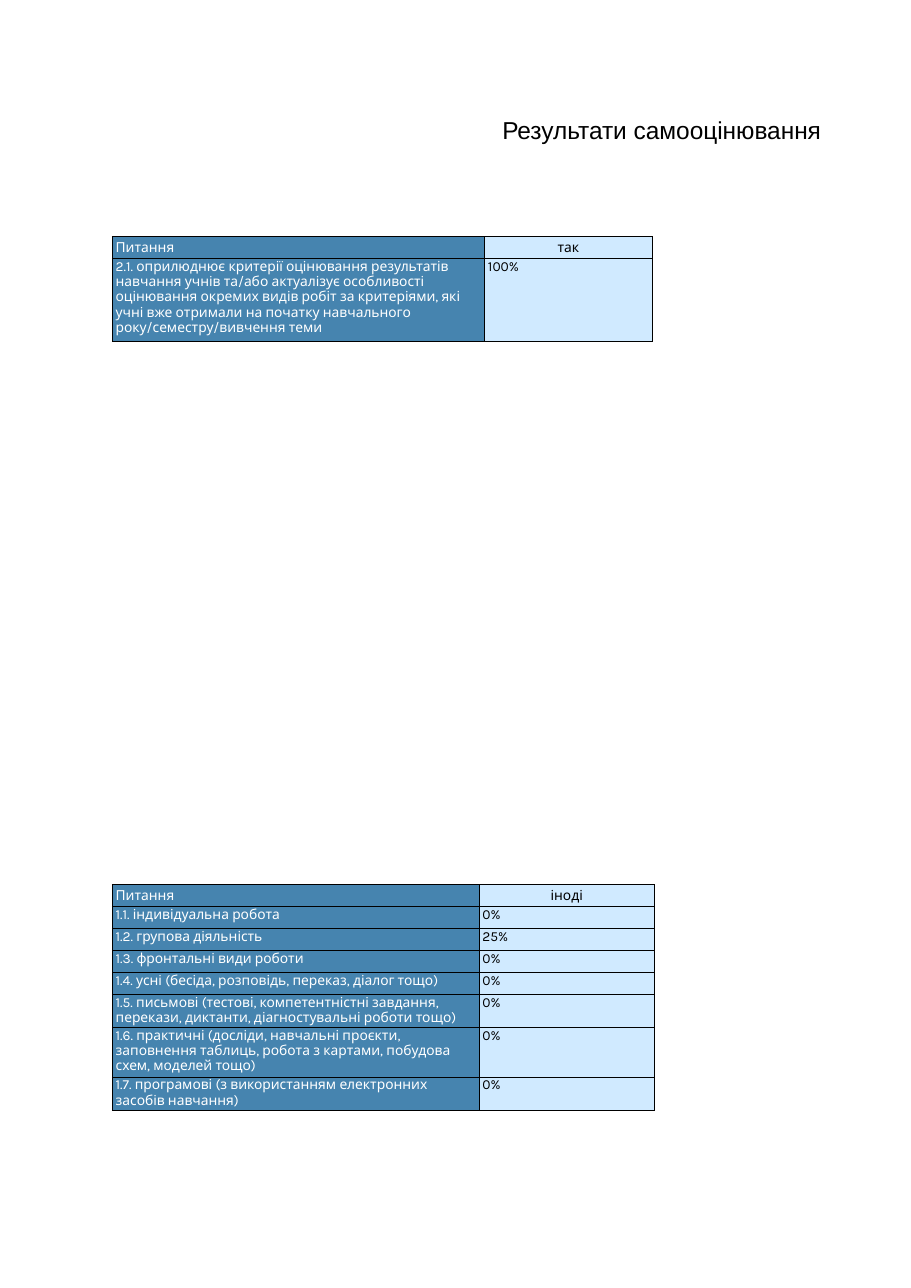
from pptx import Presentation
from pptx.dml.color import RGBColor
from pptx.enum.text import MSO_ANCHOR as Anchor, PP_ALIGN as Align
from pptx.util import Inches, Pt
from lxml.etree import SubElement
from pptx.oxml.ns import qn

# Content
TITLE = "Результати самооцінювання"
CRITERIA = [
    ("Питання", "так", 0.2),
    ("2.1. оприлюднює критерії оцінювання результатів навчання учнів та/або "
     "актуалізує особливості оцінювання окремих видів робіт за критеріями, які "
     "учні вже отримали на початку навчального року/семестру/вивчення теми",
     "100%", 0.75),
]
WORK_TYPES = [
    ("Питання", "іноді", 0.2),
    ("1.1. індивідуальна робота", "0%", 0.2),
    ("1.2. групова діяльність", "25%", 0.2),
    ("1.3. фронтальні види роботи", "0%", 0.2),
    ("1.4. усні (бесіда, розповідь, переказ, діалог тощо)", "0%", 0.2),
    ("1.5. письмові (тестові, компетентністні завдання, перекази, диктанти, "
     "діагностувальні роботи тощо)", "0%", 0.3),
    ("1.6. практичні (досліди, навчальні проєкти, заповнення таблиць, робота з "
     "картами, побудова схем, моделей тощо)", "0%", 0.45),
    ("1.7. програмові (з використанням електронних засобів навчання)", "0%", 0.3),
]
# Rows, top, column widths
SURVEYS = [
    (CRITERIA, 2.15, (3.38, 1.52)),
    (WORK_TYPES, 8.03, (3.33, 1.59)),
]
TABLE_LEFT = 1.02
INSET = 0.03

BLACK = RGBColor(0x00, 0x00, 0x00)
WHITE = RGBColor(0xFF, 0xFF, 0xFF)
QUESTION_BLUE = RGBColor(0x46, 0x84, 0xAF)
ANSWER_BLUE = RGBColor(0xD0, 0xEA, 0xFF)


def write(paragraph, text, font, size, color):
    paragraph.line_spacing = 0.95
    run = paragraph.add_run()
    run.text = text
    run.font.name = font
    run.font.size = Pt(size)
    run.font.color.rgb = color


def add_borders(cell):
    properties = cell._tc.get_or_add_tcPr()
    for side in ("lnL", "lnR", "lnT", "lnB"):
        line = SubElement(properties, qn(f"a:{side}"), w=str(Pt(0.75)))
        fill = SubElement(line, qn("a:solidFill"))
        SubElement(fill, qn("a:srgbClr"), val=str(BLACK))


def format_cell(cell, text, is_header, is_answer):
    add_borders(cell)
    cell.fill.solid()
    cell.fill.fore_color.rgb = ANSWER_BLUE if is_answer else QUESTION_BLUE
    cell.margin_left = cell.margin_right = Inches(INSET)
    cell.margin_top = cell.margin_bottom = 0
    cell.vertical_anchor = Anchor.MIDDLE if is_header else Anchor.TOP
    paragraph = cell.text_frame.paragraphs[0]
    paragraph.alignment = Align.CENTER if is_header and is_answer else Align.LEFT
    write(paragraph, text, "Karla", 9, BLACK if is_answer else WHITE)


def add_survey(slide, rows, top, widths):
    height = sum(row[-1] for row in rows)
    survey = slide.shapes.add_table(
        len(rows), len(widths), Inches(TABLE_LEFT), Inches(top),
        Inches(sum(widths)), Inches(height)).table
    survey.first_row = survey.horz_banding = False
    for column, width in zip(survey.columns, widths):
        column.width = Inches(width)
    for r, (question, answer, row_height) in enumerate(rows):
        survey.rows[r].height = Inches(row_height)
        for c, text in enumerate((question, answer)):
            format_cell(survey.cell(r, c), text, r == 0, c == 1)


def main():
    deck = Presentation()
    deck.slide_width, deck.slide_height = Inches(8.27), Inches(11.69)
    slide = deck.slides.add_slide(deck.slide_layouts[5])

    # Title
    title = slide.shapes.title
    title.left, title.top = Inches(4.53), Inches(1.06)
    title.width, title.height = Inches(3.1), Inches(0.26)
    frame = title.text_frame
    frame.word_wrap = True
    frame.vertical_anchor = Anchor.MIDDLE
    frame.margin_left = Inches(INSET)
    frame.margin_right = frame.margin_top = frame.margin_bottom = 0
    frame.paragraphs[0].alignment = Align.LEFT
    write(frame.paragraphs[0], TITLE, "Arial", 16, BLACK)

    # Survey tables
    for rows, top, widths in SURVEYS:
        add_survey(slide, rows, top, widths)

    deck.save("out.pptx")


if __name__ == "__main__":
    main()
